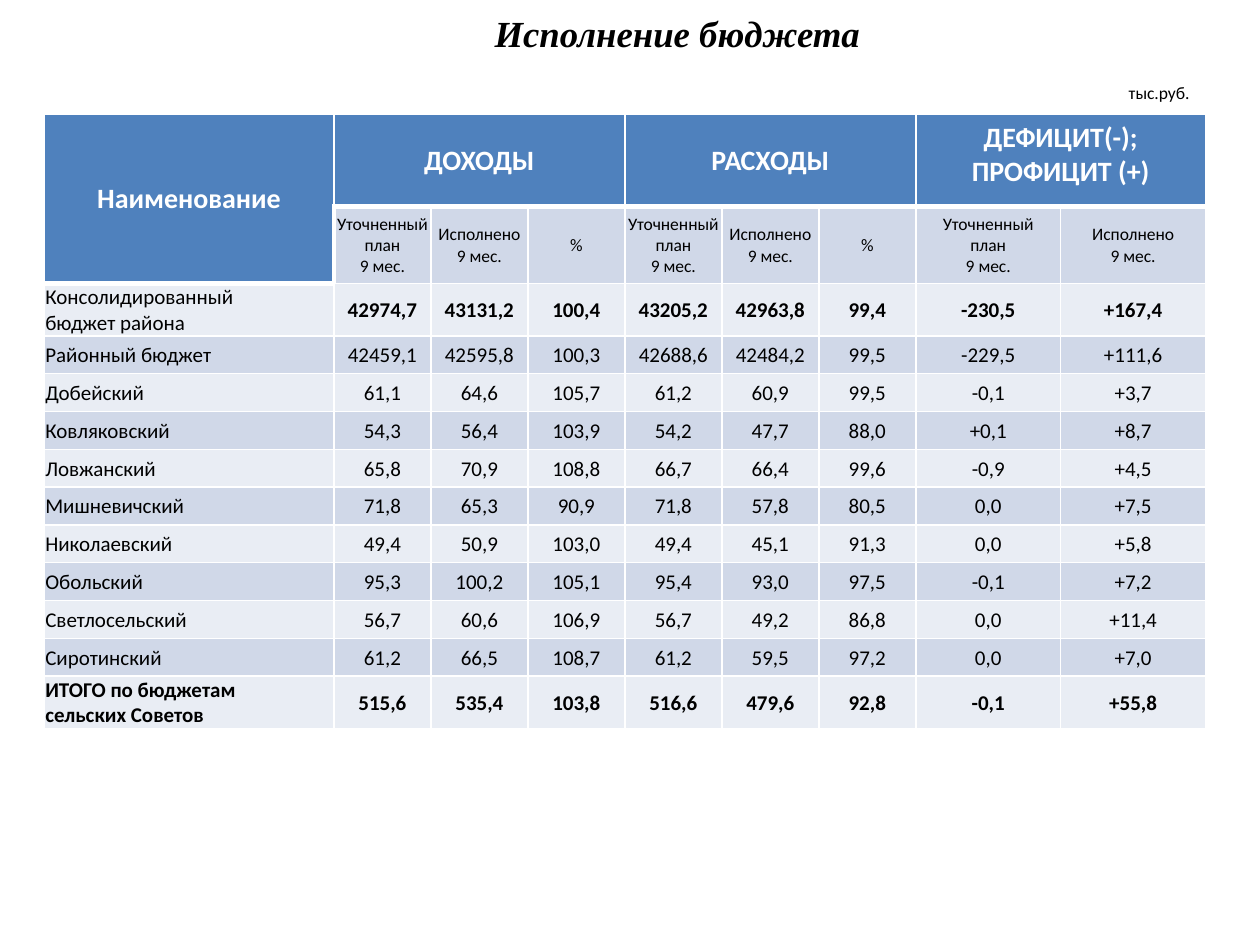
from lxml import etree
from pptx import Presentation
from pptx.dml.color import RGBColor
from pptx.enum.text import MSO_ANCHOR as Anchor, PP_ALIGN as Align
from pptx.oxml.ns import qn
from pptx.util import Inches, Pt

COLORS = {
    "white": "FFFFFF",
    "black": "000000",
    "header": "4F81BD",
    "dark_band": "D0D8E8",
    "light_band": "E9EDF4",
}
COL_WIDTHS = [2.3] + [0.77] * 6 + [1.15] * 2
ROW_HEIGHTS = [0.73, 0.61, 0.41] + [0.3] * 9 + [0.41]

# text, first row, first column, last row, last column
GROUPS = [
    ("Наименование", 0, 0, 1, 0),
    ("ДОХОДЫ", 0, 1, 0, 3),
    ("РАСХОДЫ", 0, 4, 0, 6),
    ("ДЕФИЦИТ(-); ПРОФИЦИТ (+)", 0, 7, 0, 8),
]
PLAN = "Уточненный\nплан\n9 мес."
DONE = "Исполнено\n9 мес."
SUBHEADS = ["Уточненный план\n9 мес.", "Исполнено 9 мес.", "%",
            PLAN, DONE, "%", PLAN, DONE]
BUDGETS = [
    ("Консолидированный\nбюджет района", "42974,7 43131,2 100,4 43205,2 42963,8 99,4 -230,5 +167,4"),
    ("Районный бюджет", "42459,1 42595,8 100,3 42688,6 42484,2 99,5 -229,5 +111,6"),
    ("Добейский", "61,1 64,6 105,7 61,2 60,9 99,5 -0,1 +3,7"),
    ("Ковляковский", "54,3 56,4 103,9 54,2 47,7 88,0 +0,1 +8,7"),
    ("Ловжанский", "65,8 70,9 108,8 66,7 66,4 99,6 -0,9 +4,5"),
    ("Мишневичский", "71,8 65,3 90,9 71,8 57,8 80,5 0,0 +7,5"),
    ("Николаевский", "49,4 50,9 103,0 49,4 45,1 91,3 0,0 +5,8"),
    ("Обольский", "95,3 100,2 105,1 95,4 93,0 97,5 -0,1 +7,2"),
    ("Светлосельский", "56,7 60,6 106,9 56,7 49,2 86,8 0,0 +11,4"),
    ("Сиротинский", "61,2 66,5 108,7 61,2 59,5 97,2 0,0 +7,0"),
    ("ИТОГО по бюджетам\nсельских Советов", "515,6 535,4 103,8 516,6 479,6 92,8 -0,1 +55,8"),
]


def rgb(name):
    return RGBColor.from_string(COLORS[name])


def write(tf, text, size=12, font="Calibri", color="black", bold=False,
          italic=False, align=Align.CENTER):
    """Fill a text frame, one paragraph for each line of text."""
    for i, line in enumerate(text.split("\n")):
        p = tf.paragraphs[0] if i == 0 else tf.add_paragraph()
        p.alignment = align
        r = p.add_run()
        r.text = line
        r.font.size = Pt(size)
        r.font.name = font
        r.font.bold = bold
        r.font.italic = italic
        r.font.color.rgb = rgb(color)


def add_text(s, text, left, top, width, height, wrap=True, anchor=Anchor.TOP, **fmt):
    box = s.shapes.add_textbox(Inches(left), Inches(top), Inches(width), Inches(height))
    tf = box.text_frame
    tf.word_wrap = wrap
    tf.vertical_anchor = anchor
    write(tf, text, **fmt)


def set_borders(cell, **widths):
    """White borders: 1 pt, or the width given for L, R, T or B."""
    tc_pr = cell._tc.get_or_add_tcPr()
    for side in "LRTB":
        ln = etree.SubElement(tc_pr, qn(f"a:ln{side}"), w=str(Pt(widths.get(side, 1))))
        fill = etree.SubElement(ln, qn("a:solidFill"))
        etree.SubElement(fill, qn("a:srgbClr"), val=COLORS["white"])


def style_cell(cell, row, col):
    heading = row == 0 or (row == 1 and col == 0)
    thick = {}
    if row == 0 or (row == 1 and col == 0):
        thick["B"] = 3
    if (row == 1 and col > 0) or (row == 2 and col == 0):
        thick["T"] = 3
    if row == 1 and col == 1:
        thick["L"] = 3
    set_borders(cell, **thick)
    cell.fill.solid()
    band = "dark_band" if row % 2 else "light_band"
    cell.fill.fore_color.rgb = rgb("header" if heading else band)
    cell.vertical_anchor = Anchor.TOP if row == 0 and col >= 7 else Anchor.MIDDLE
    if not heading:
        cell.margin_left = cell.margin_right = cell.margin_top = Inches(0.01)
        cell.margin_bottom = 0


def add_budget_table(s):
    table = s.shapes.add_table(
        len(ROW_HEIGHTS), len(COL_WIDTHS), Inches(0.35), Inches(0.91),
        Inches(sum(COL_WIDTHS)), Inches(sum(ROW_HEIGHTS))).table
    for column, width in zip(table.columns, COL_WIDTHS):
        column.width = Inches(width)
    for row, height in zip(table.rows, ROW_HEIGHTS):
        row.height = Inches(height)
    for i in range(len(ROW_HEIGHTS)):
        for j in range(len(COL_WIDTHS)):
            style_cell(table.cell(i, j), i, j)

    for text, top, left, bottom, right in GROUPS:
        cell = table.cell(top, left)
        cell.merge(table.cell(bottom, right))
        write(cell.text_frame, text, size=16, color="white", bold=True)
    for j, text in enumerate(SUBHEADS, 1):
        write(table.cell(1, j).text_frame, text, size=10)

    last = len(BUDGETS) - 1
    for i, (name, values) in enumerate(BUDGETS):
        write(table.cell(i + 2, 0).text_frame, name, bold=i == last, align=Align.LEFT)
        for j, value in enumerate(values.split(), 1):
            write(table.cell(i + 2, j).text_frame, value, bold=i in (0, last))


def main():
    prs = Presentation()
    prs.slide_width, prs.slide_height = Inches(10), Inches(7.5)
    s = prs.slides.add_slide(prs.slide_layouts[6])
    add_budget_table(s)
    add_text(s, "Исполнение бюджета", 0.78, 0, 9.19, 0.52, anchor=Anchor.MIDDLE,
             size=21, font="Times New Roman", bold=True, italic=True)
    add_text(s, "тыс.руб.", 8.86, 0.6, 0.69, 0.27, wrap=False, size=10, align=Align.LEFT)
    prs.save("out.pptx")


if __name__ == "__main__":
    main()
